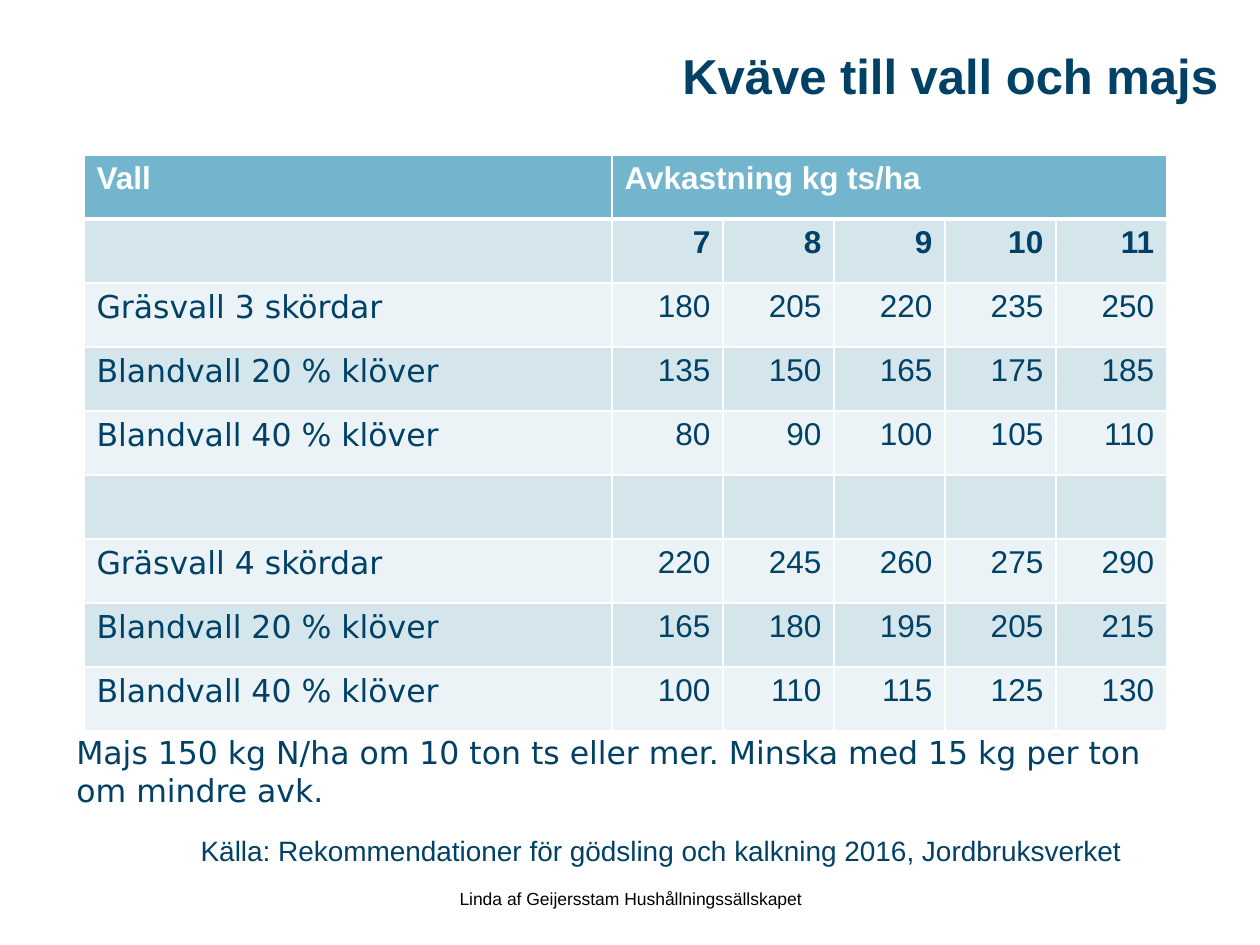
from collections import namedtuple

from lxml.etree import SubElement
from pptx import Presentation
from pptx.dml.color import RGBColor
from pptx.enum.text import MSO_ANCHOR, MSO_AUTO_SIZE, PP_ALIGN
from pptx.oxml.ns import qn
from pptx.util import Emu, Pt

Box = namedtuple("Box", "left top width height")

EMU_PER_PX = 914400 / 126
NAVY = RGBColor(0x00, 0x41, 0x65)
BLACK = RGBColor(0x00, 0x00, 0x00)
WHITE = RGBColor(0xFF, 0xFF, 0xFF)
HEADER_BLUE = RGBColor(0x72, 0xB5, 0xCC)
BAND_DARK = RGBColor(0xD5, 0xE5, 0xEC)
BAND_LIGHT = RGBColor(0xEB, 0xF3, 0xF6)
SANS = "Arial"
LABEL_FONT = "DejaVu Sans"

YIELD_ROWS = [
    ("Vall", "Avkastning kg ts/ha", "", "", "", ""),
    ("", "7", "8", "9", "10", "11"),
    ("Gräsvall 3 skördar", "180", "205", "220", "235", "250"),
    ("Blandvall 20 % klöver", "135", "150", "165", "175", "185"),
    ("Blandvall 40 % klöver", "80", "90", "100", "105", "110"),
    ("", "", "", "", "", ""),
    ("Gräsvall 4 skördar", "220", "245", "260", "275", "290"),
    ("Blandvall 20 % klöver", "165", "180", "195", "205", "215"),
    ("Blandvall 40 % klöver", "100", "110", "115", "125", "130"),
]


def px(length):
    """Turn px into EMU."""
    return Emu(round(length * EMU_PER_PX))


def write(frame, text, size, font_name, color, align, bold=False):
    """Put one formatted paragraph in a text frame."""
    frame.text = text
    paragraph = frame.paragraphs[0]
    paragraph.alignment = align
    font = paragraph.font
    font.size, font.name, font.bold = Pt(size), font_name, bold
    font.color.rgb = color


def add_title(slide, box, text):
    """Move and format the title placeholder."""
    title = slide.shapes.title
    title.left, title.top, title.width, title.height = map(px, box)
    frame = title.text_frame
    frame.auto_size = MSO_AUTO_SIZE.NONE
    frame.vertical_anchor = MSO_ANCHOR.MIDDLE
    frame.margin_right = px(27)
    write(frame, text, 28, SANS, NAVY, PP_ALIGN.RIGHT, bold=True)


def add_note(slide, box, text, size, font_name=SANS, color=NAVY,
             align=PP_ALIGN.CENTER, anchor=MSO_ANCHOR.MIDDLE):
    """Add a wrapped line of text in its box."""
    frame = slide.shapes.add_textbox(*map(px, box)).text_frame
    frame.word_wrap = True
    frame.vertical_anchor = anchor
    write(frame, text, size, font_name, color, align)


def add_borders(cell, top, bottom):
    """Draw white cell borders, with top and bottom widths in points."""
    properties = cell._tc.get_or_add_tcPr()
    for side, width in (("L", 1), ("R", 1), ("T", top), ("B", bottom)):
        line = SubElement(properties, qn(f"a:ln{side}"), w=str(Pt(width)))
        fill = SubElement(line, qn("a:solidFill"))
        SubElement(fill, qn("a:srgbClr"), val=str(WHITE))


def add_yield_table(slide, box, label_width):
    """Add the banded table of nitrogen need by yield."""
    row_count, column_count = len(YIELD_ROWS), len(YIELD_ROWS[0])
    table = slide.shapes.add_table(row_count, column_count, *map(px, box)).table
    value_width = (box.width - label_width) // (column_count - 1)
    for index, column in enumerate(table.columns):
        column.width = px(value_width if index else label_width)
    for row_index, values in enumerate(YIELD_ROWS):
        table.rows[row_index].height = px(box.height // row_count)
        is_header = row_index == 0
        band = BAND_DARK if row_index % 2 else BAND_LIGHT
        for column_index, value in enumerate(values):
            cell = table.cell(row_index, column_index)
            add_borders(cell, 3 if row_index == 1 else 1, 3 if is_header else 1)
            cell.fill.solid()
            cell.fill.fore_color.rgb = HEADER_BLUE if is_header else band
            is_label = column_index == 0
            write(cell.text_frame, value, 18,
                  LABEL_FONT if is_label and not is_header else SANS,
                  WHITE if is_header else NAVY,
                  PP_ALIGN.LEFT if is_label or is_header else PP_ALIGN.RIGHT,
                  bold=row_index < 2)
    table.cell(0, 1).merge(table.cell(0, column_count - 1))


def main():
    """Build and save the slide."""
    deck = Presentation()
    deck.slide_width, deck.slide_height = px(1260), px(945)
    slide = deck.slides.add_slide(deck.slide_layouts.get_by_name("Title Only"))
    add_title(slide, Box(-15, 35, 1260, 80), "Kväve till vall och majs")
    add_note(slide, Box(94, 810, 1134, 80),
             "Källa: Rekommendationer för gödsling och kalkning 2016, Jordbruksverket", 16)
    add_yield_table(slide, Box(84, 155, 1083, 576), label_width=528)
    add_note(slide, Box(64, 731, 1134, 80),
             "Majs 150 kg N/ha om 10 ton ts eller mer. "
             "Minska med 15 kg per ton om mindre avk.",
             18, LABEL_FONT, align=PP_ALIGN.LEFT)
    add_note(slide, Box(431, 882, 399, 42),
             "Linda af Geijersstam Hushållningssällskapet",
             10, color=BLACK, anchor=MSO_ANCHOR.TOP)
    deck.save("out.pptx")


if __name__ == "__main__":
    main()
